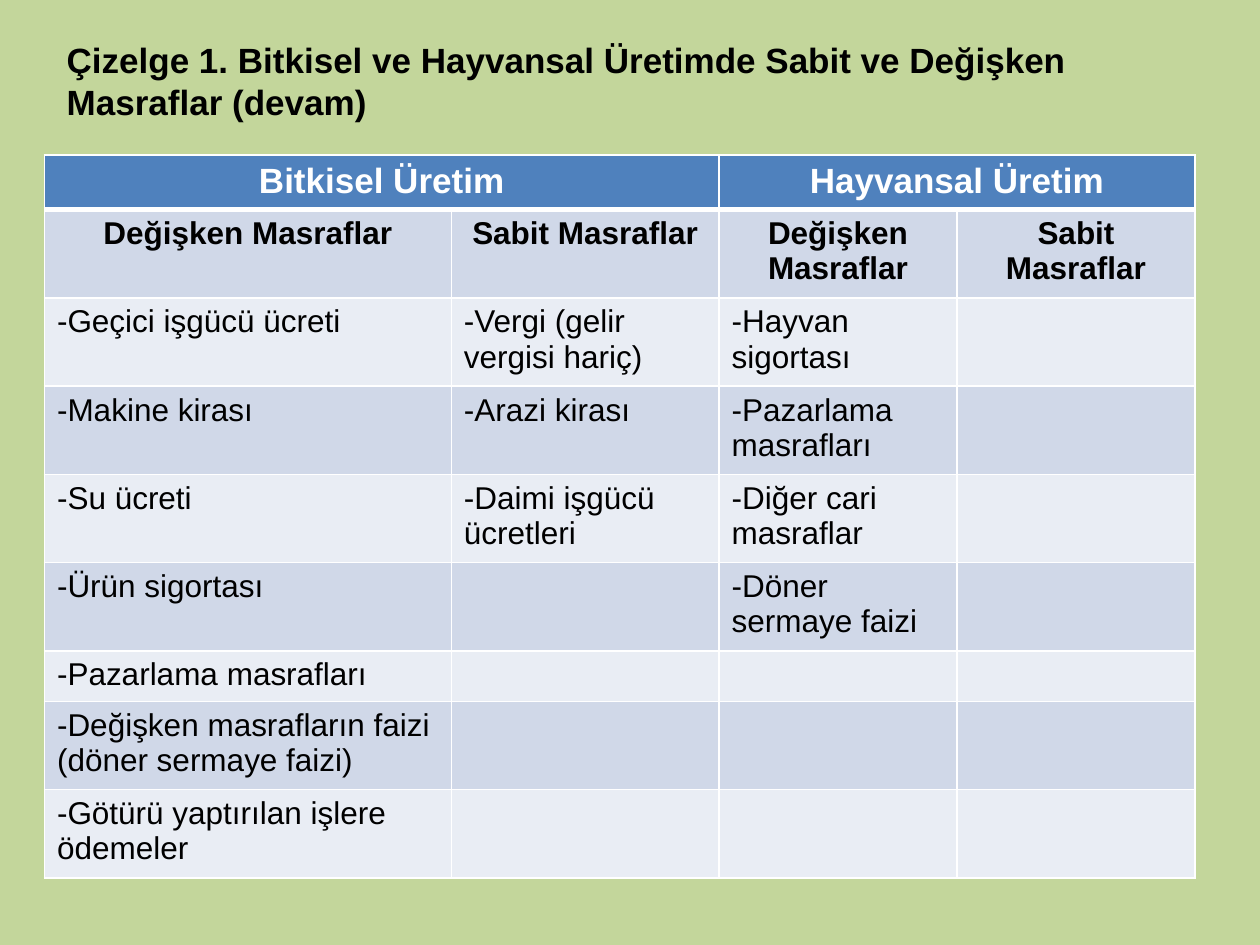
from lxml.etree import SubElement
from pptx import Presentation
from pptx.dml.color import RGBColor
from pptx.enum.text import PP_ALIGN
from pptx.oxml.ns import qn
from pptx.util import Pt


def color(value):
    return RGBColor.from_string(value)


def add_border(cell, side, width):
    line = SubElement(cell._tc.get_or_add_tcPr(), qn("a:" + side), w=str(Pt(width)))
    fill = SubElement(line, qn("a:solidFill"))
    SubElement(fill, qn("a:srgbClr"), val="FFFFFF")


deck = Presentation()
deck.slide_width, deck.slide_height = Pt(720), Pt(540)
page = deck.slides.add_slide(deck.slide_layouts[6])
page.background.fill.solid()
page.background.fill.fore_color.rgb = color("C3D69B")

# Title
box = page.shapes.add_textbox(Pt(31), Pt(18.7), Pt(646.5), Pt(55.5))
box.text_frame.word_wrap = True
para = box.text_frame.paragraphs[0]
para.text = "Çizelge 1. Bitkisel ve Hayvansal Üretimde Sabit ve Değişken Masraflar (devam)"
para.font.name = "Arial"
para.font.size = Pt(20)
para.font.bold = True
para.font.color.rgb = color("000000")

# Cost table: group header, column header, then costs
rows = [
    ["Bitkisel Üretim", "", "Hayvansal Üretim", ""],
    ["Değişken Masraflar", "Sabit Masraflar", "Değişken Masraflar", "Sabit Masraflar"],
    ["-Geçici işgücü ücreti", "-Vergi (gelir vergisi hariç)", "-Hayvan sigortası", ""],
    ["-Makine kirası", "-Arazi kirası", "-Pazarlama masrafları", ""],
    ["-Su ücreti", "-Daimi işgücü ücretleri", "-Diğer cari masraflar", ""],
    ["-Ürün sigortası", "", "-Döner sermaye faizi", ""],
    ["-Pazarlama masrafları", "", "", ""],
    ["-Değişken masrafların faizi (döner sermaye faizi)", "", "", ""],
    ["-Götürü yaptırılan işlere ödemeler", "", "", ""],
]
widths = [232.5, 153, 136, 136]
heights = [31.2] + [50.4] * 5 + [28.8] + [50.4] * 2
table = page.shapes.add_table(
    len(rows), len(widths), Pt(25.4), Pt(88.6), Pt(sum(widths)), Pt(sum(heights))
).table
for column, width in zip(table.columns, widths):
    column.width = Pt(width)
for row, height in zip(table.rows, heights):
    row.height = Pt(height)
for start in (0, 2):
    table.cell(0, start).merge(table.cell(0, start + 1))

for r, texts in enumerate(rows):
    for c, text in enumerate(texts):
        cell = table.cell(r, c)
        add_border(cell, "lnL", 1)
        add_border(cell, "lnR", 1)
        add_border(cell, "lnT", 3 if r == 1 else 1)
        add_border(cell, "lnB", 3 if r == 0 else 1)
        cell.fill.solid()
        band = "D0D8E8" if r % 2 else "E9EDF4"
        cell.fill.fore_color.rgb = color("4F81BD" if r == 0 else band)
        para = cell.text_frame.paragraphs[0]
        para.text = text
        para.alignment = PP_ALIGN.CENTER if r < 2 else PP_ALIGN.LEFT
        para.font.name = "Arial"
        para.font.size = Pt(20 if r == 0 else 18)
        para.font.bold = r < 2
        para.font.color.rgb = color("FFFFFF" if r == 0 else "000000")

deck.save("out.pptx")
